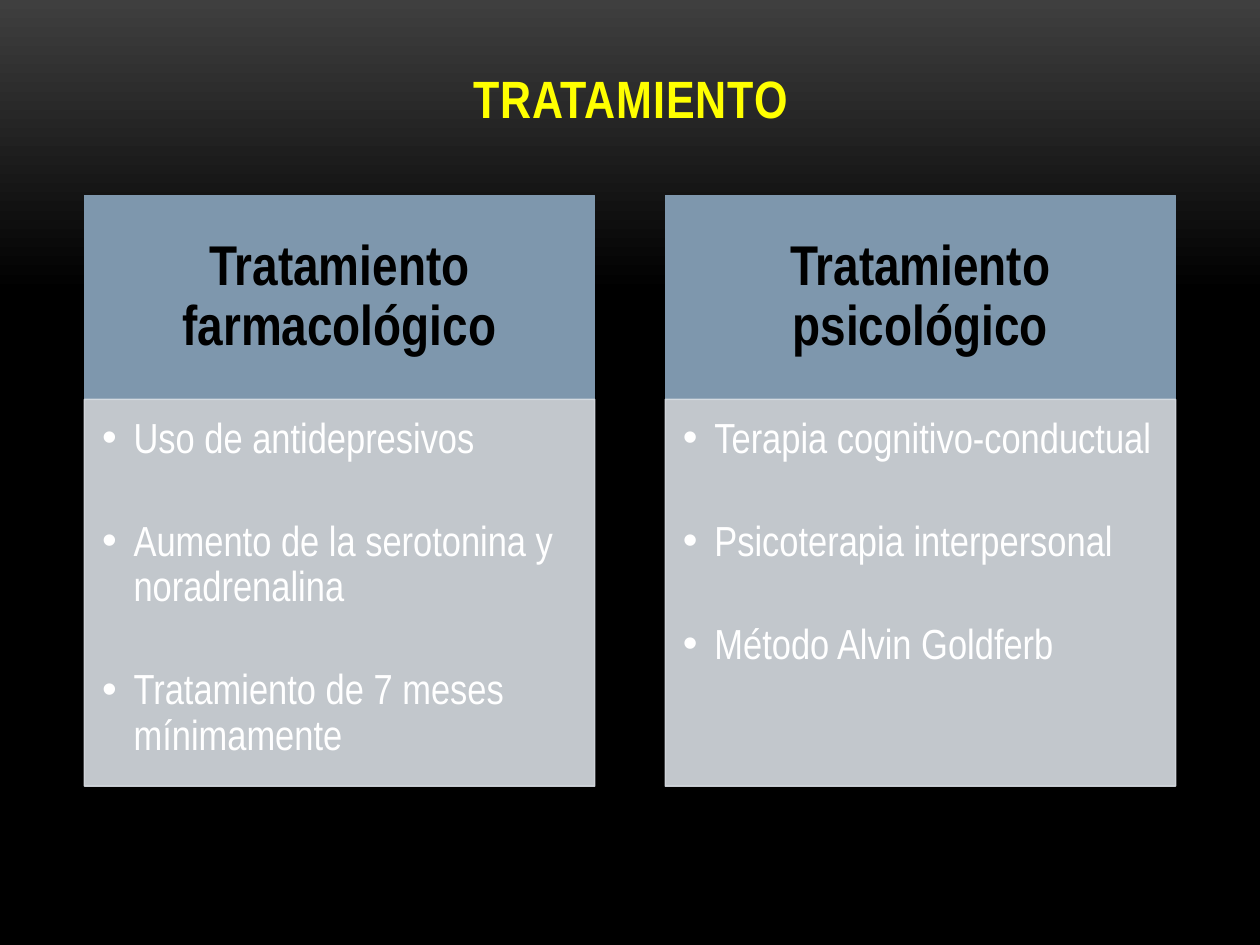
from dataclasses import dataclass

from lxml.etree import SubElement
from pptx import Presentation
from pptx.dml.color import RGBColor
from pptx.enum.shapes import MSO_SHAPE
from pptx.enum.text import MSO_ANCHOR, PP_ALIGN
from pptx.oxml.ns import qn
from pptx.util import Inches, Pt


@dataclass(frozen=True)
class Theme:
    """Colours, font and type sizes of the slide."""
    font: str = "Arial Narrow"
    glow: str = "3F3F3F"
    black: str = "000000"
    title: str = "FFFF00"
    header: str = "7E97AD"
    panel: str = "D8DDE3"
    body: str = "FFFFFF"
    title_size: int = 30
    header_size: int = 32
    body_size: int = 24


THEME = Theme()
LEFT, TOP, WIDTH, PITCH = 0.67, 1.55, 4.05, 4.61
HEADER_H, PANEL_H = 1.62, 3.07
COLUMNS = [
    ("Tratamiento farmacológico", [
        "Uso de antidepresivos",
        "Aumento de la serotonina y noradrenalina",
        "Tratamiento de 7 meses mínimamente",
    ]),
    ("Tratamiento psicológico", [
        "Terapia cognitivo-conductual",
        "Psicoterapia interpersonal",
        "Método Alvin Goldferb",
    ]),
]


def set_background(s):
    """Fade the slide from grey at the top to black."""
    fill = s.background.fill
    fill.gradient()
    fill.gradient_angle = 270
    stops = zip(fill.gradient_stops, (0, 0.31), (THEME.glow, THEME.black))
    for stop, position, color in stops:
        stop.position = position
        stop.color.rgb = RGBColor.from_string(color)


def add_bullet(p):
    """Give a paragraph a hanging round bullet."""
    pPr = p._p.get_or_add_pPr()
    pPr.set("marL", str(Inches(0.25)))
    pPr.set("indent", str(Inches(-0.25)))
    SubElement(pPr, qn("a:buFont"), typeface="Arial")
    SubElement(pPr, qn("a:buChar"), char="•")


def write(sp, lines, *, size, color, bold=False, align=PP_ALIGN.LEFT,
          anchor=MSO_ANCHOR.TOP, insets=(0.1, 0.05, 0.1, 0.05),
          line_spacing=1.0, gap=0, bullets=False, tracking=0):
    """Fill a shape with one formatted paragraph per line."""
    tf = sp.text_frame
    tf.word_wrap = True
    tf.vertical_anchor = anchor
    (tf.margin_left, tf.margin_top,
     tf.margin_right, tf.margin_bottom) = map(Inches, insets)
    for i, line in enumerate(lines):
        p = tf.add_paragraph() if i else tf.paragraphs[0]
        p.alignment = align
        p.line_spacing = line_spacing
        if i:
            p.space_before = Pt(gap)
        if bullets:
            add_bullet(p)
        r = p.add_run()
        r.text = line
        r.font.name = THEME.font
        r.font.size = Pt(size)
        r.font.bold = bold
        r.font.color.rgb = RGBColor.from_string(color)
        if tracking:
            r._r.get_or_add_rPr().set("spc", str(int(tracking * 100)))


def add_box(s, x, y, w, h, color, opacity=100):
    """Draw a rectangle with matching fill and outline."""
    sp = s.shapes.add_shape(MSO_SHAPE.RECTANGLE, *map(Inches, (x, y, w, h)))
    sp.shadow.inherit = False
    sp.line.width = Pt(0.85)
    for fill in (sp.fill, sp.line.fill):
        fill.solid()
        fill.fore_color.rgb = RGBColor.from_string(color)
    if opacity < 100:
        for clr in sp._element.spPr.iter(qn("a:srgbClr")):
            SubElement(clr, qn("a:alpha"), val=str(opacity * 1000))
    return sp


def add_title(s, text):
    """Add the centred slide title."""
    sp = s.shapes.add_textbox(*map(Inches, (LEFT, 0.3, 8.67, 0.77)))
    write(sp, [text], size=THEME.title_size, color=THEME.title, bold=True,
          align=PP_ALIGN.CENTER, anchor=MSO_ANCHOR.BOTTOM, tracking=0.5)


def add_column(s, x, heading, items):
    """Add a heading box with its bulleted panel below."""
    header = add_box(s, x, TOP, WIDTH, HEADER_H, THEME.header)
    write(header, [heading], size=THEME.header_size, color=THEME.black,
          bold=True, align=PP_ALIGN.CENTER, anchor=MSO_ANCHOR.MIDDLE,
          insets=(0.25, 0.14, 0.25, 0.14), line_spacing=0.9)
    panel = add_box(s, x, TOP + HEADER_H, WIDTH, PANEL_H, THEME.panel, 90)
    write(panel, items, size=THEME.body_size, color=THEME.body,
          insets=(0.14, 0.14, 0.19, 0.21), line_spacing=0.9, gap=33,
          bullets=True)


def main():
    """Build and save the slide."""
    prs = Presentation()
    prs.slide_width, prs.slide_height = Inches(10), Inches(7.5)
    s = prs.slides.add_slide(prs.slide_layouts[6])
    set_background(s)
    add_title(s, "TRATAMIENTO")
    for i, (heading, items) in enumerate(COLUMNS):
        add_column(s, LEFT + i * PITCH, heading, items)
    prs.save("out.pptx")


if __name__ == "__main__":
    main()
